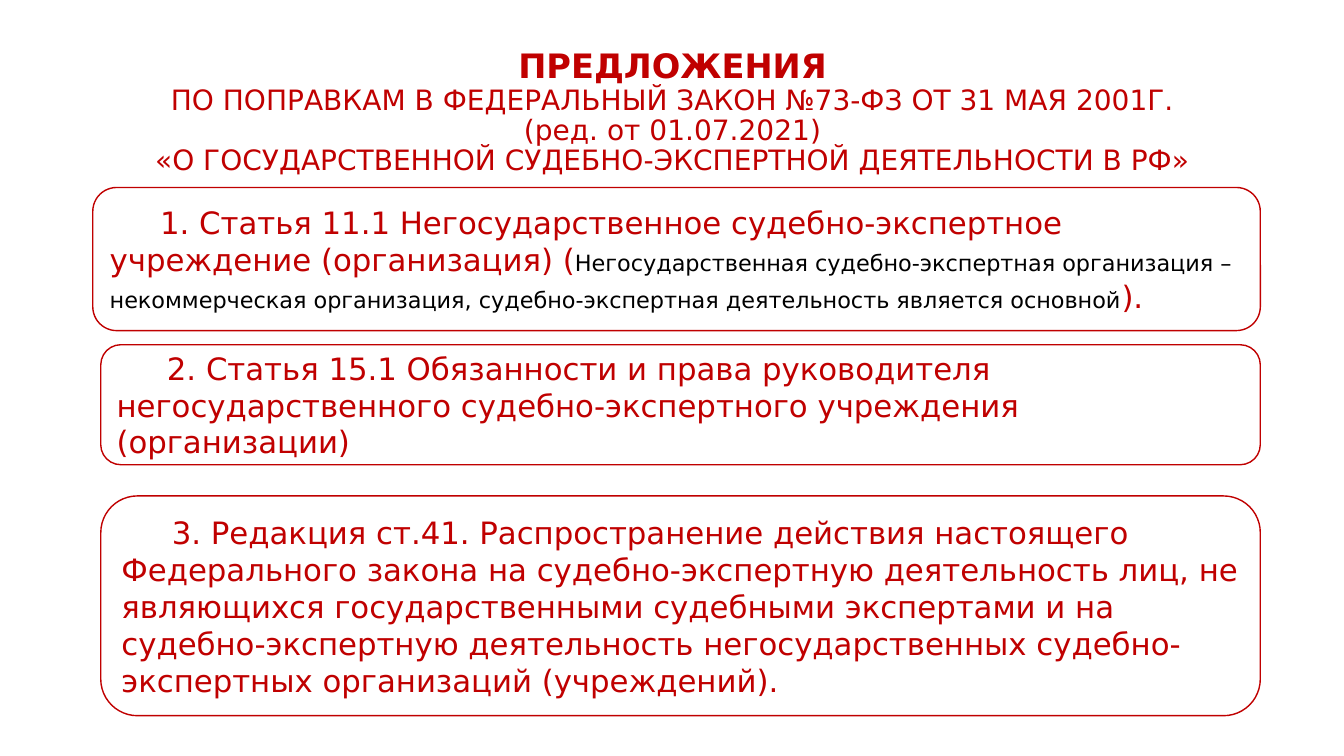
import copy

import pptx
import pptx.dml.color
import pptx.enum.shapes
import pptx.enum.text
import pptx.util
from pptx.util import Inches

FONT = "DejaVu Sans"
RED, BLACK, WHITE = "C00000", "000000", "FFFFFF"

TITLE_LINES = [
    "ПРЕДЛОЖЕНИЯ",
    "ПО ПОПРАВКАМ В ФЕДЕРАЛЬНЫЙ ЗАКОН №73-ФЗ ОТ 31 МАЯ 2001Г.",
    "(ред. от 01.07.2021)",
    "«О ГОСУДАРСТВЕННОЙ СУДЕБНО-ЭКСПЕРТНОЙ ДЕЯТЕЛЬНОСТИ В РФ»",
]
# Each proposal: its box (left, top, width, height) and its (text, size, colour) runs
PROPOSALS = [
    ((0.92, 1.86, 11.58, 1.42), [
        ("1. Статья 11.1 Негосударственное судебно-экспертное учреждение "
         "(организация) (", 22, RED),
        ("Негосударственная судебно-экспертная организация – некоммерческая "
         "организация, судебно-экспертная деятельность является основной", 16, BLACK),
        (").", 22, RED),
    ]),
    ((1, 3.42, 11.5, 1.19), [
        ("2. Статья 15.1 Обязанности и права руководителя негосударственного "
         "судебно-экспертного учреждения (организации)", 22, RED),
    ]),
    ((1, 4.92, 11.5, 2.18), [
        ("3. Редакция ст.41. Распространение действия настоящего Федерального "
         "закона на судебно-экспертную деятельность лиц, не являющихся "
         "государственными судебными экспертами и на судебно-экспертную "
         "деятельность негосударственных судебно-экспертных организаций "
         "(учреждений).", 22, RED),
    ]),
]


def rgb(color):
    return pptx.dml.color.RGBColor.from_string(color)


def format_run(r, size, color, bold=False):
    r.font.name = FONT
    r.font.size = pptx.util.Pt(size)
    r.font.bold = bold
    r.font.color.rgb = rgb(color)


def fill_title(sp, box):
    sp.left, sp.top, sp.width, sp.height = map(Inches, box)
    tf = sp.text_frame
    tf.auto_size = pptx.enum.text.MSO_AUTO_SIZE.NONE
    tf.vertical_anchor = pptx.enum.text.MSO_ANCHOR.MIDDLE
    p = tf.paragraphs[0]
    p.text = "\v".join(TITLE_LINES)
    p.alignment = pptx.enum.text.PP_ALIGN.CENTER
    p.line_spacing = 0.9
    for i, r in enumerate(p.runs):
        format_run(r, 24 if i == 0 else 20, RED, bold=i == 0)
    # Line breaks take the run format so that they keep the line height
    for br in p._p.br_lst if hasattr(p._p, "br_lst") else p._p.xpath("a:br"):
        br.append(copy.deepcopy(p.runs[-1].font._rPr))


def add_proposal(s, box, runs):
    sp = s.shapes.add_shape(pptx.enum.shapes.MSO_SHAPE.ROUNDED_RECTANGLE,
                            *map(Inches, box))
    sp.shadow.inherit = False
    sp.fill.solid()
    sp.fill.fore_color.rgb = rgb(WHITE)
    sp.line.color.rgb = rgb(RED)
    sp.line.width = pptx.util.Pt(1)
    tf = sp.text_frame
    tf.word_wrap = True
    tf.vertical_anchor = pptx.enum.text.MSO_ANCHOR.MIDDLE
    p = tf.paragraphs[0]
    p.alignment = pptx.enum.text.PP_ALIGN.LEFT
    p._p.get_or_add_pPr().set("indent", str(Inches(0.5)))
    for text, size, color in runs:
        r = p.add_run()
        r.text = text
        format_run(r, size, color)


def main():
    prs = pptx.Presentation()
    prs.slide_width, prs.slide_height = Inches(13.33), Inches(7.5)
    s = prs.slides.add_slide(prs.slide_layouts.get_by_name("Title Only"))
    fill_title(s.shapes.title, (0.92, 0.4, 11.5, 1.45))
    for box, runs in PROPOSALS:
        add_proposal(s, box, runs)
    prs.save("out.pptx")


if __name__ == "__main__":
    main()
